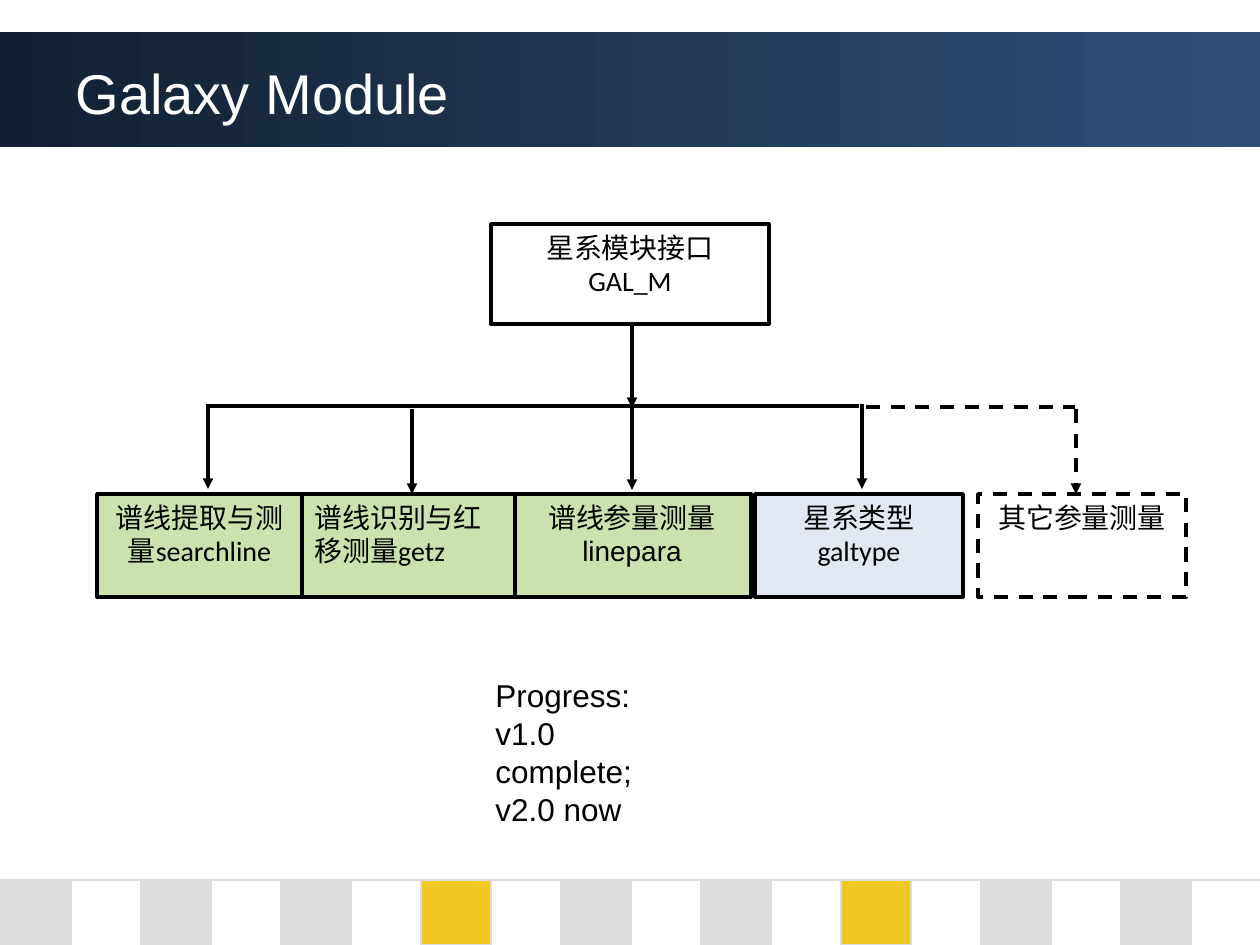
from pptx import Presentation
from pptx.dml.color import RGBColor
from pptx.enum.dml import MSO_LINE
from pptx.enum.shapes import MSO_CONNECTOR, MSO_SHAPE
from pptx.enum.text import MSO_ANCHOR, PP_ALIGN
from pptx.oxml.ns import qn
from pptx.util import Pt
from lxml.etree import SubElement


def px(*lengths):
    return [round(length * 914400 / 126) for length in lengths]


def colour(code):
    return RGBColor.from_string(code)


deck = Presentation()
deck.slide_width, deck.slide_height = px(1260, 945)
slide = deck.slides.add_slide(deck.slide_layouts[5])
shapes = slide.shapes

banner = shapes.add_shape(MSO_SHAPE.RECTANGLE, *px(0, 32, 1260, 115))
banner.shadow.inherit = False
banner.line.fill.background()
banner.fill.gradient()
banner.fill.gradient_angle = 0
for stop, code in zip(banner.fill.gradient_stops, ("122032", "2E507A")):
    stop.color.rgb = colour(code)

for index in range(9):
    tile = shapes.add_shape(MSO_SHAPE.RECTANGLE, *px(1 + 140 * index, 880, 70, 65))
    tile.shadow.inherit = False
    tile.fill.solid()
    tile.fill.fore_color.rgb = colour("EFC821" if index in (3, 6) else "DDDDDD")
    tile.line.color.rgb = colour("DDDDDD")
    tile.line.width = Pt(0.75)

heading = shapes.title
shapes.element.append(heading.element)
heading.left, heading.top, heading.width, heading.height = px(63, 38, 1134, 108)
heading.text = "Galaxy Module"
heading.text_frame.vertical_anchor = MSO_ANCHOR.MIDDLE
heading.text_frame.paragraphs[0].alignment = PP_ALIGN.LEFT
heading_format = {"name": "Arial", "size": Pt(32)}
for attribute, value in heading_format.items():
    setattr(heading.text_frame.paragraphs[0].font, attribute, value)
heading.text_frame.paragraphs[0].font.color.rgb = colour("FFFFFF")

modules = [
    ("星系模块接口\nGAL_M", 491, 224, 278, 100, "FFFFFF", "Calibri", PP_ALIGN.CENTER, False),
    ("谱线参量测量\nlinepara", 513, 494, 238, 103, "CBE2AF", "Arial", PP_ALIGN.CENTER, False),
    ("星系类型\ngaltype", 755, 494, 208, 103, "E1E8F1", "Calibri", PP_ALIGN.CENTER, False),
    ("谱线提取与测量searchline", 97, 494, 205, 103, "CBE2AF", "Calibri", PP_ALIGN.CENTER, False),
    ("谱线识别与红移测量getz", 302, 494, 213, 103, "CBE2AF", "Calibri", PP_ALIGN.LEFT, False),
    ("其它参量测量", 978, 494, 208, 103, "FFFFFF", "Calibri", PP_ALIGN.CENTER, True),
]
for label, left, top, width, height, fill, font_name, alignment, planned in modules:
    module = shapes.add_shape(MSO_SHAPE.RECTANGLE, *px(left, top, width, height))
    module.shadow.inherit = False
    module.fill.solid()
    module.fill.fore_color.rgb = colour(fill)
    module.line.color.rgb = colour("000000")
    module.line.width = Pt(2)
    if planned:
        module.line.dash_style = MSO_LINE.DASH
    module.text_frame.text = label
    module.text_frame.word_wrap = True
    module.text_frame.vertical_anchor = MSO_ANCHOR.TOP
    for paragraph in module.text_frame.paragraphs:
        paragraph.alignment = alignment
        module_format = {"name": font_name, "size": Pt(16)}
        for attribute, value in module_format.items():
            setattr(paragraph.font, attribute, value)
        paragraph.font.color.rgb = colour("000000")

links = [
    (0, 880, 1260, 880, "DDDDDD", 0.75, False, False),
    (632, 324, 632, 408, "000000", 2, True, False),
    (209, 406, 859, 406, "000000", 2, False, False),
    (208, 404, 208, 489, "000000", 2, True, False),
    (632, 407, 632, 490, "000000", 2, True, False),
    (862, 404, 862, 489, "000000", 2, True, False),
    (412, 409, 412, 494, "000000", 2, True, False),
    (866, 407, 1075, 407, "000000", 2, False, True),
    (1076, 409, 1076, 494, "000000", 2, True, True),
]
for start_x, start_y, end_x, end_y, code, weight, arrow, planned in links:
    link = shapes.add_connector(MSO_CONNECTOR.STRAIGHT, *px(start_x, start_y, end_x, end_y))
    link.line.color.rgb = colour(code)
    link.line.width = Pt(weight)
    if planned:
        link.line.dash_style = MSO_LINE.DASH
    if arrow:
        SubElement(link.element.spPr.find(qn("a:ln")), qn("a:tailEnd"), type="triangle")
    SubElement(link.element.spPr, qn("a:effectLst"))

progress = shapes.add_textbox(*px(483, 670, 229, 126))
progress.text_frame.word_wrap = False
progress.text_frame.text = "Progress:\nv1.0 complete;\nv2.0 now"
progress_format = {"name": "Arial", "size": Pt(18)}
for paragraph in progress.text_frame.paragraphs:
    for attribute, value in progress_format.items():
        setattr(paragraph.font, attribute, value)
    paragraph.font.color.rgb = colour("000000")

deck.save("out.pptx")
